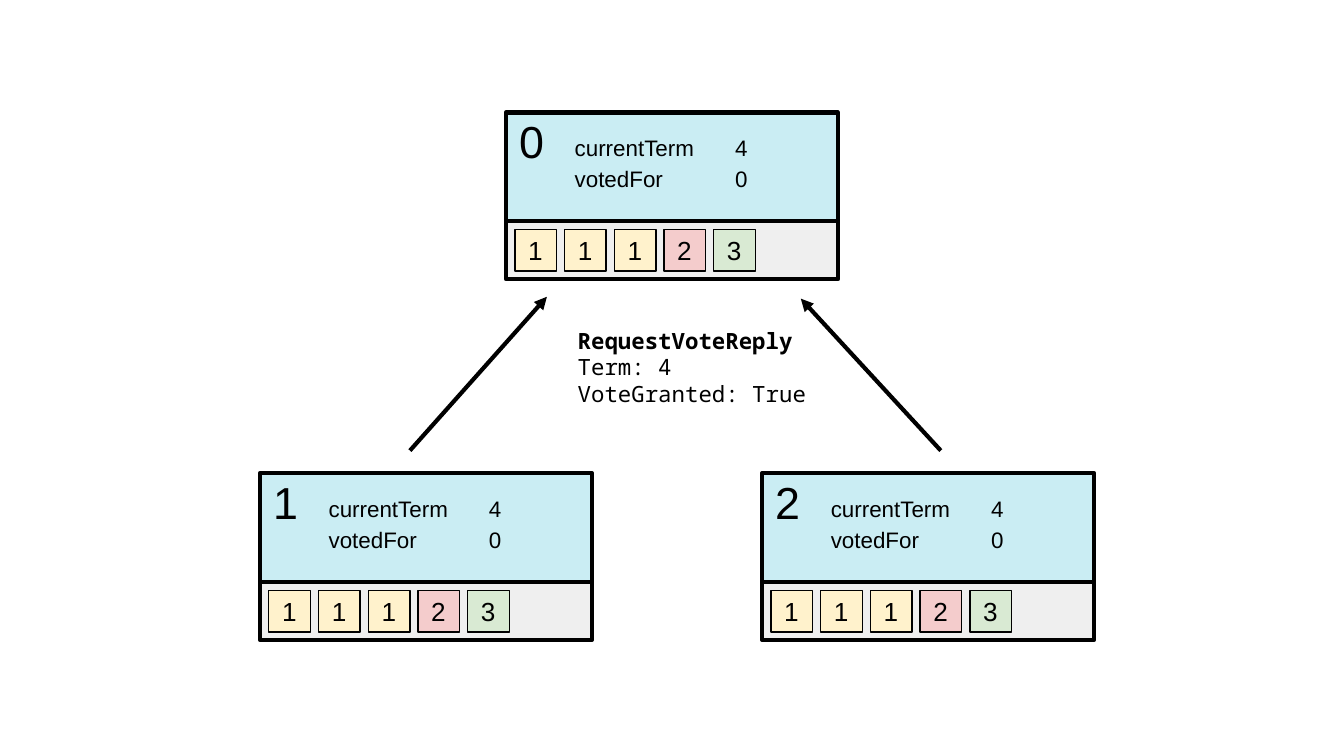
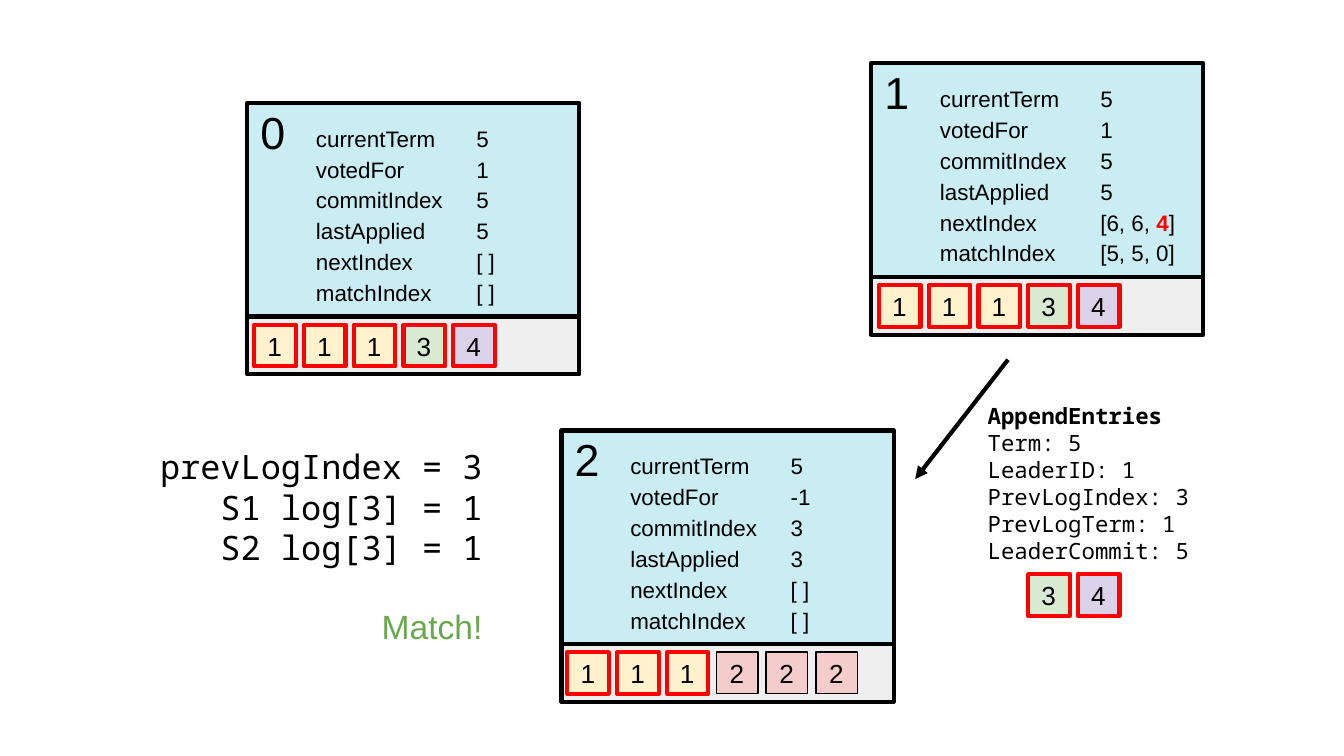
from dataclasses import dataclass

from pptx import Presentation
from pptx import util as u
from pptx.dml.color import RGBColor
from pptx.enum import shapes, text
from pptx.oxml.ns import qn
from lxml import etree

# Colours and fonts
BLACK = RGBColor(0x00, 0x00, 0x00)
RED = RGBColor(0xFF, 0x00, 0x00)
GREEN = RGBColor(0x6A, 0xA8, 0x4F)
STATE_FILL = RGBColor(0xCA, 0xED, 0xF3)
LOG_FILL = RGBColor(0xEF, 0xEF, 0xEF)
TERM_FILLS = {
    "1": RGBColor(0xFF, 0xF2, 0xCC),
    "2": RGBColor(0xF4, 0xCC, 0xCC),
    "3": RGBColor(0xD9, 0xEA, 0xD3),
    "4": RGBColor(0xD9, 0xD2, 0xE9),
}
SANS = "Arial"
MONO = "Noto Sans Mono"

# Sizes in points
INSET = 7.2
THICK, THIN = 2.25, 0.75
SERVER_WIDTH, LOG_HEIGHT = 178, 31
ENTRY_SIZE, ENTRY_STEP, ENTRY_DROP = 22.3, 26.64, 4.4

FIELDS = ("currentTerm", "votedFor", "commitIndex",
          "lastApplied", "nextIndex", "matchIndex")


@dataclass(frozen=True)
class Panel:
    """Heights of a server's state panel and where its log starts."""
    height: float
    text_height: float
    log_top: float


SHORT = Panel(58.3, 47.5, 58.3)
TALL = Panel(116.6, 106.6, 114.4)


@dataclass(frozen=True)
class Server:
    name: str
    left: float
    top: float
    panel: Panel
    values: tuple[str, ...]
    log: str
    log_inset: float
    marked: int = 0  # leading log entries outlined in red


@dataclass(frozen=True)
class Arrow:
    start: tuple[float, float]
    end: tuple[float, float]


@dataclass(frozen=True)
class Message:
    left: float
    top: float
    height: float
    lines: tuple[str, ...]


def write(box, lines, size: float, font: str = SANS, spacing: float = 1.0,
          align=text.PP_ALIGN.LEFT) -> None:
    frame = box.text_frame
    frame.text = "\n".join(lines)
    frame.word_wrap = True
    frame.margin_left = frame.margin_right = u.Pt(INSET)
    frame.margin_top = frame.margin_bottom = u.Pt(INSET)
    for para in frame.paragraphs:
        para.alignment = align
        para.line_spacing = spacing
        para.font.size = u.Pt(size)
        for span in para.runs:
            style(span, font, size)


def style(span, font: str, size: float, color: RGBColor = BLACK,
          bold: bool = False) -> None:
    span.font.name = font
    span.font.size = u.Pt(size)
    span.font.color.rgb = color
    span.font.bold = bold


def highlight(para, word: str) -> None:
    """Split a paragraph around a word and set that word in bold red."""
    before, hit, after = para.text.partition(word)
    size = para.runs[0].font.size.pt
    para.text = ""
    for part, color in ((before, BLACK), (hit, RED), (after, BLACK)):
        span = para.add_run()
        span.text = part
        style(span, SANS, size, color, bold=color == RED)


def add_text(parent, left: float, top: float, width: float, height: float):
    return parent.add_textbox(u.Pt(left), u.Pt(top), u.Pt(width), u.Pt(height))


def add_rect(parent, left: float, top: float, width: float, height: float,
             fill: RGBColor, line: RGBColor = BLACK, weight: float = THICK):
    rect = parent.add_shape(shapes.MSO_SHAPE.RECTANGLE, u.Pt(left), u.Pt(top),
                            u.Pt(width), u.Pt(height))
    rect.shadow.inherit = False
    rect.fill.solid()
    rect.fill.fore_color.rgb = fill
    rect.line.color.rgb = line
    rect.line.width = u.Pt(weight)
    return rect


def add_log(parent, left: float, top: float, log: str, marked: int) -> None:
    for index, term in enumerate(log):
        line, weight = (RED, THICK) if index < marked else (BLACK, THIN)
        entry = add_rect(parent, left + index * ENTRY_STEP, top, ENTRY_SIZE,
                         ENTRY_SIZE, TERM_FILLS[term], line, weight)
        write(entry, [term], 14)
        entry.text_frame.vertical_anchor = text.MSO_ANCHOR.MIDDLE


def add_server(page, server: Server):
    """Draw a server with its log; return the box that holds its values."""
    left, top, panel = server.left, server.top, server.panel
    parent = page.shapes.add_group_shape().shapes
    add_rect(parent, left, top, SERVER_WIDTH, panel.height, STATE_FILL)
    fields = add_text(parent, left + 29.8, top + 2.3, 92, panel.text_height)
    write(fields, FIELDS[:len(server.values)], 12, spacing=1.15)
    log_top = top + panel.log_top
    add_rect(parent, left, log_top, SERVER_WIDTH, LOG_HEIGHT, LOG_FILL)
    write(add_text(parent, left, top - 6.5, 51, 42.5), [server.name], 24)
    values = add_text(parent, left + 115.7, top + 2.3, 55.4, panel.text_height)
    write(values, server.values, 12, spacing=1.15)
    add_log(parent, left + server.log_inset, log_top + ENTRY_DROP,
            server.log, server.marked)
    return values


def add_arrow(page, arrow: Arrow) -> None:
    line = page.shapes.add_connector(
        shapes.MSO_CONNECTOR.STRAIGHT,
        *(u.Pt(value) for value in arrow.start + arrow.end))
    line.line.color.rgb = BLACK
    line.line.width = u.Pt(THICK)
    etree.SubElement(line.line._get_or_add_ln(), qn("a:tailEnd"),
                     type="triangle", w="med", len="med")
    etree.SubElement(line._element.spPr, qn("a:effectLst"))


def add_message(page, message: Message) -> None:
    box = add_text(page.shapes, message.left, message.top, 139, message.height)
    write(box, message.lines, 12, MONO)
    box.text_frame.paragraphs[0].runs[0].font.bold = True


def build_vote_page(page) -> None:
    for name, left, top in (("0", 271, 60.3), ("1", 139.2, 253.5),
                            ("2", 408.2, 253.5)):
        add_server(page, Server(name, left, top, SHORT, ("4", "0"),
                                "11123", 4.8))
    add_arrow(page, Arrow((219.6, 241.4), (293, 159)))
    add_arrow(page, Arrow((504, 241.4), (429, 160)))
    add_message(page, Message(302.4, 167.8, 60.5, (
        "RequestVoteReply", "Term: 4", "VoteGranted: True")))


def build_append_page(page) -> None:
    # Servers
    follower = Server("0", 132.4, 55.2, TALL,
                      ("5", "1", "5", "5", "[ ]", "[ ]"), "11134", 3.8, 5)
    leader = Server("1", 466.7, 33.9, TALL,
                    ("5", "1", "5", "5", "[6, 6, 4]", "[5, 5, 0]"),
                    "11134", 4.2, 5)
    lagging = Server("2", 300.8, 230.6, TALL,
                     ("5", "-1", "3", "3", "[ ]", "[ ]"), "111222", 3.1, 3)
    add_server(page, follower)
    leader_values = add_server(page, leader)
    highlight(leader_values.text_frame.paragraphs[4], "4")
    add_server(page, lagging)

    # Request to the lagging server
    add_arrow(page, Arrow((540, 192.7), (490.3, 256.7)))
    add_message(page, Message(522, 208.3, 99.4, (
        "AppendEntries", "Term: 5", "LeaderID: 1", "PrevLogIndex: 3",
        "PrevLogTerm: 1", "LeaderCommit: 5")))
    add_log(page.shapes, 550.8, 307.6, "34", marked=2)

    # Consistency check
    check = add_text(page.shapes, 41, 231.8, 224.6, 121.7)
    write(check, ("prevLogIndex = 3", "S1 log[3] = 1", "S2 log[3] = 1",
                  "Match!"), 18, MONO, align=text.PP_ALIGN.RIGHT)
    result = check.text_frame.paragraphs[-1]
    result.space_before = u.Pt(21)
    style(result.runs[0], SANS, 18, GREEN)


def main() -> None:
    deck = Presentation()
    deck.slide_width, deck.slide_height = u.Pt(720), u.Pt(405)
    blank = deck.slide_layouts[6]
    for build in (build_vote_page, build_append_page):
        build(deck.slides.add_slide(blank))
    deck.save("out.pptx")


if __name__ == "__main__":
    main()
